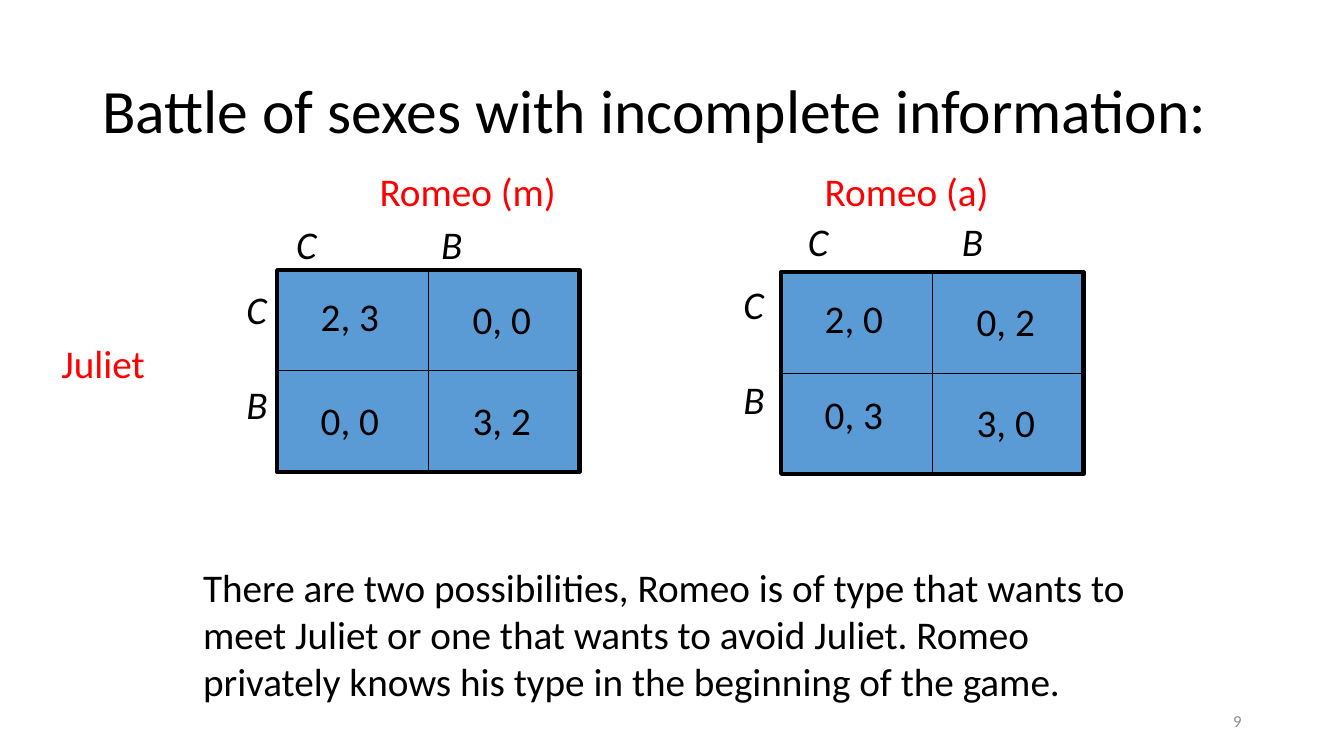
from lxml import etree
from pptx import Presentation
from pptx.dml.color import RGBColor
from pptx.enum.shapes import MSO_CONNECTOR, MSO_SHAPE
from pptx.enum.text import MSO_ANCHOR, PP_ALIGN
from pptx.oxml.ns import qn
from pptx.util import Pt

RECTANGLE, STRAIGHT = MSO_SHAPE.RECTANGLE, MSO_CONNECTOR.STRAIGHT
TOP, MIDDLE = MSO_ANCHOR.TOP, MSO_ANCHOR.MIDDLE
LEFT, RIGHT = PP_ALIGN.LEFT, PP_ALIGN.RIGHT
BLACK = RGBColor(0x00, 0x00, 0x00)
RED = RGBColor(0xFF, 0x00, 0x00)
BLUE = RGBColor(0x5B, 0x9B, 0xD5)
GREY = RGBColor(0x8C, 0x8C, 0x8C)
FONT = "Calibri"

# Content; all lengths in points
TITLE = "Battle of sexes with incomplete information:"
EXPLANATION = (
    "There are two possibilities, Romeo is of type that wants to meet Juliet "
    "or one that wants to avoid Juliet. Romeo privately knows his type in the "
    "beginning of the game."
)
ROW_PLAYER = "Juliet"
SLIDE_NUMBER = "9"
ACTIONS = ("C", "B")
GAMES = [
    {
        "corner": (198, 193),
        "player": ("Romeo (m)", 264, 148.5),
        "column_labels": (204.5, 154, 103.5),  # left, top, step
        "row_labels": (169, 200, 68),
        # payoff text and its offset below the top of the matrix
        "payoffs": [[("2, 3", 12), ("0, 0", 14.5)],
                    [("0, 0", 86.5), ("3, 2", 86.5)]],
    },
    {
        "corner": (558, 194.5),
        "player": ("Romeo (a)", 582, 147),
        "column_labels": (570, 152, 110),
        "row_labels": (524, 196.5, 68),
        "payoffs": [[("2, 0", 12), ("0, 2", 14.5)],
                    [("0, 3", 80.5), ("3, 0", 86.5)]],
    },
]
MATRIX_WIDTH, MATRIX_HEIGHT = 216, 144
PAYOFF_INSET, PAYOFF_STEP = 24, 108.5
LINE_HEIGHT = 41
LABEL_WIDTH, PAYOFF_WIDTH, PLAYER_WIDTH = 36, 57, 148

presentation = Presentation()
presentation.slide_width, presentation.slide_height = Pt(960), Pt(540)
slide = presentation.slides.add_slide(presentation.slide_layouts[6])


def add_text(text, left, top, width, height=LINE_HEIGHT, size=28, color=BLACK,
             italic=False, wrap=True, anchor=TOP, align=LEFT, spacing=1.0):
    box = slide.shapes.add_textbox(Pt(left), Pt(top), Pt(width), Pt(height))
    frame = box.text_frame
    frame.word_wrap = wrap
    frame.vertical_anchor = anchor
    paragraph = frame.paragraphs[0]
    paragraph.alignment = align
    paragraph.line_spacing = spacing
    run = paragraph.add_run()
    run.text = text
    run.font.name = FONT
    run.font.size = Pt(size)
    run.font.italic = italic
    run.font.color.rgb = color


def add_divider(x1, y1, x2, y2):
    divider = slide.shapes.add_connector(STRAIGHT, Pt(x1), Pt(y1), Pt(x2), Pt(y2))
    divider.line.color.rgb = BLACK
    divider.line.width = Pt(0.75)
    etree.SubElement(divider._element.spPr, qn("a:effectLst"))


def add_matrix(left, top):
    matrix = slide.shapes.add_shape(
        RECTANGLE, Pt(left), Pt(top), Pt(MATRIX_WIDTH), Pt(MATRIX_HEIGHT))
    matrix.shadow.inherit = False
    matrix.fill.solid()
    matrix.fill.fore_color.rgb = BLUE
    matrix.line.color.rgb = BLACK
    matrix.line.width = Pt(3)
    middle_x, middle_y = left + MATRIX_WIDTH / 2, top + MATRIX_HEIGHT / 2
    add_divider(middle_x, top, middle_x, top + MATRIX_HEIGHT)
    add_divider(left, middle_y, left + MATRIX_WIDTH, middle_y)


# Title
add_text(TITLE, 66, 28.75, 828, 104.4, size=44, anchor=MIDDLE, spacing=0.9)

# The two games
for game in GAMES:
    left, top = game["corner"]
    add_matrix(left, top)

    player, player_left, player_top = game["player"]
    add_text(player, player_left, 116, PLAYER_WIDTH, color=RED, wrap=False)

    column_left, column_top, column_step = game["column_labels"]
    row_left, row_top, row_step = game["row_labels"]
    for i, action in enumerate(ACTIONS):
        add_text(action, column_left + i * column_step, column_top,
                 LABEL_WIDTH, italic=True)
        add_text(action, row_left, row_top + i * row_step,
                 LABEL_WIDTH, italic=True)

    for payoff_row in game["payoffs"]:
        for column, (payoff, offset) in enumerate(payoff_row):
            add_text(payoff, left + PAYOFF_INSET + column * PAYOFF_STEP,
                     top + offset, PAYOFF_WIDTH, wrap=False)

# Row player, explanation and slide number
add_text(ROW_PLAYER, 36.75, 238.5, 101, color=RED)
add_text(EXPLANATION, 138, 399, 678, 109)
add_text(SLIDE_NUMBER, 678, 500.5, 216, 28.75, size=12, color=GREY,
         anchor=MIDDLE, align=RIGHT)

presentation.save("out.pptx")
